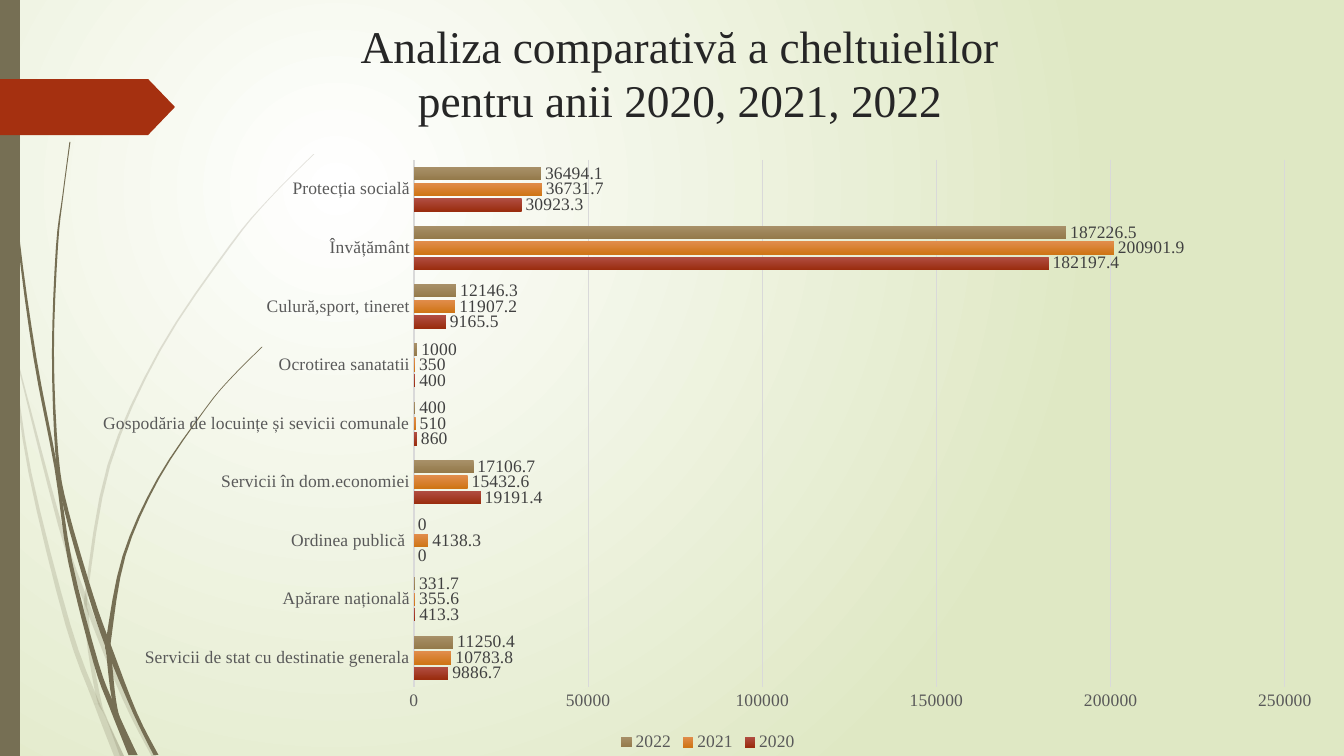
"""Build a slide comparing yearly spending by sector in a clustered bar chart."""
from lxml import etree
from pptx import Presentation
from pptx.chart.data import CategoryChartData
from pptx.dml.color import RGBColor
from pptx.enum.chart import XL_CHART_TYPE, XL_LABEL_POSITION, XL_LEGEND_POSITION, XL_TICK_MARK
from pptx.enum.shapes import MSO_SHAPE
from pptx.enum.text import MSO_ANCHOR, MSO_AUTO_SIZE, PP_ALIGN
from pptx.oxml import parse_xml
from pptx.oxml.ns import qn
from pptx.util import Pt

BARS = XL_CHART_TYPE.BAR_CLUSTERED
OUTSIDE = XL_LABEL_POSITION.OUTSIDE_END
BOTTOM = XL_LEGEND_POSITION.BOTTOM
NO_TICK = XL_TICK_MARK.NONE
RECT, ARROW = MSO_SHAPE.RECTANGLE, MSO_SHAPE.PENTAGON
TOP, CENTER, FIXED = MSO_ANCHOR.TOP, PP_ALIGN.CENTER, MSO_AUTO_SIZE.NONE

FONT = "Times New Roman"
SCALE = 12192000 / 1344
STEPS = 4
COLORS = {
    "stem": "766F54", "arrow": "A53010", "title": "262626", "axis": "595959",
    "label": "404040", "grid": "D9D9D9", "glow": "FFFFFF", "edge": "DFE8C4",
}
TITLE = "Analiza comparativă a cheltuielilor\vpentru anii 2020, 2021, 2022"
SECTORS = [
    "Servicii de stat cu destinatie generala", "Apărare națională",
    "Ordinea publică ", "Servicii în dom.economiei",
    "Gospodăria de locuințe și sevicii comunale", "Ocrotirea sanatatii",
    "Culură,sport, tineret", "Învățământ", "Protecția socială",
]
YEARS = [
    ("2020", ("B14E43", "9A2D0F"),
     (9886.7, 413.3, 0, 19191.4, 860, 400, 9165.5, 182197.4, 30923.3)),
    ("2021", ("E18D4C", "CF7516"),
     (10783.8, 355.6, 4138.3, 15432.6, 510, 350, 11907.2, 200901.9, 36731.7)),
    ("2022", ("A89068", "947A4B"),
     (11250.4, 331.7, 0, 17106.7, 400, 1000, 12146.3, 187226.5, 36494.1)),
]
CHART = (93, 138, 1230, 618)
PLOT = {"x": 321, "y": 22, "w": 871, "h": 527}

PALE = [
    ((0, 1, 4, 5),
     [(2, 293, 3), (12, 353, 2), (30, 473, 3), (68, 625, 5), (97, 704, 6),
      (119, 756, 10)]),
    ((0, 2, 4),
     [(14, 348, 1), (60, 525, 4), (87, 604, 5), (125, 699, 5), (154, 756, 5)]),
    ((0, 5, 6, 9, 10),
     [(314, 154, 1), (270, 198, 1), (230, 246, 2), (160, 350, 2), (109, 465, 3),
      (87, 589, 3), (87, 615, 4), (90, 651, 4), (99, 700, 4), (106, 717, 1),
      (122, 756, 4)]),
]
DARK = [
    ((0, 4, 7, 8),
     [(4, 0, 1), (8, 110, 1), (18, 234, 2), (35, 358, 3), (56, 468, 3),
      (70, 561, 4), (96, 663, 5), (112, 706, 6), (133, 755, 9)]),
    ((0, 4, 5, 7, 9),
     [(70, 142, 1), (63, 195, 1), (57, 247, 2), (53, 352, 2), (57, 455, 3),
      (66, 509, 4), (91, 596, 5), (109, 648, 6), (135, 713, 4), (156, 755, 5)]),
    ((0, 5, 6, 8, 9),
     [(262, 347, 1), (232, 377, 1), (206, 408, 1), (158, 479, 2), (124, 556, 3),
      (109, 637, 5), (109, 655, 5), (114, 700, 4), (122, 725, 1), (136, 755, 3)]),
]


def px(*sizes):
    """Turn px lengths into EMU."""
    return [round(size * SCALE) for size in sizes]


def rgb(name):
    """Look up a named colour, or read a hex string."""
    return RGBColor.from_string(COLORS.get(name, name))


def style(font, color, size=12.5):
    """Set typeface, size and colour of a font."""
    font.name, font.size, font.bold = FONT, Pt(size), False
    font.color.rgb = rgb(color)


def paint(shape, color, alpha=100):
    """Give a shape a flat fill with no line or shadow."""
    shape.shadow.inherit = False
    shape.line.fill.background()
    shape.fill.solid()
    shape.fill.fore_color.rgb = rgb(color)
    if alpha < 100:
        tint = shape.fill._xPr.find(".//" + qn("a:srgbClr"))
        etree.SubElement(tint, qn("a:alpha")).set("val", str(alpha * 1000))


def smooth(knots):
    """Run a Catmull-Rom curve through knots of centre x, centre y and width."""
    ends = [knots[0], *knots, knots[-1]]
    curve = []
    for a, b, c, d in zip(ends, ends[1:], ends[2:], ends[3:]):
        for step in range(STEPS):
            t = step / STEPS
            curve.append([
                (2 * q + (r - p) * t + (2 * p - 5 * q + 4 * r - s) * t ** 2
                 + (3 * q - p - 3 * r + s) * t ** 3) / 2
                for p, q, r, s in zip(a, b, c, d)])
    return curve + [knots[-1]]


def draw_stem(shapes, cuts, knots, alpha):
    """Draw one tapered stem, split at the knots named in cuts."""
    curve = smooth(knots)
    for first, last in zip(cuts, cuts[1:]):
        part = curve[first * STEPS:last * STEPS + 1]
        left = [px(x - w / 2, y) for x, y, w in part]
        right = [px(x + w / 2, y) for x, y, w in reversed(part)]
        pen = shapes.build_freeform(*left[0])
        pen.add_line_segments(left[1:] + right, close=True)
        paint(pen.convert_to_shape(), "stem", alpha)


def draw_back(slide):
    """Set the round background glow."""
    slide.background.fill.solid()
    flat = slide.background._cSld.find(".//" + qn("a:solidFill"))
    glow = parse_xml(
        '<a:gradFill xmlns:a="http://schemas.openxmlformats.org/drawingml/2006/main"'
        ' rotWithShape="1"><a:gsLst>'
        f'<a:gs pos="0"><a:srgbClr val="{COLORS["glow"]}"/></a:gs>'
        f'<a:gs pos="100000"><a:srgbClr val="{COLORS["edge"]}"/></a:gs></a:gsLst>'
        '<a:path path="circle"><a:fillToRect l="50000" t="50000" r="100000"'
        ' b="100000"/></a:path></a:gradFill>')
    flat.getparent().replace(flat, glow)


def draw_title(title):
    """Place and format the title."""
    title.left, title.top, title.width, title.height = px(151, 13, 1058, 139)
    frame = title.text_frame
    frame.text = TITLE
    frame.word_wrap, frame.auto_size, frame.vertical_anchor = True, FIXED, TOP
    frame.paragraphs[0].alignment = CENTER
    for run in frame.paragraphs[0].runs:
        style(run.font, "title", 32.4)


def place_plot(chart):
    """Fix the inner plot area within the chart."""
    area = chart._chartSpace.chart.plotArea
    for old in area.findall(qn("c:layout")):
        area.remove(old)
    layout = etree.Element(qn("c:layout"))
    manual = etree.SubElement(layout, qn("c:manualLayout"))
    wide, high = CHART[2:]
    spots = {"layoutTarget": "inner", "xMode": "edge", "yMode": "edge"}
    spots.update({tag: size / (wide if tag in "xw" else high) for tag, size in PLOT.items()})
    for tag, val in spots.items():
        etree.SubElement(manual, qn("c:" + tag)).set("val", str(val))
    area.insert(0, layout)


def draw_chart(shapes):
    """Add the bar chart."""
    data = CategoryChartData()
    data.categories = SECTORS
    for year, _, sums in YEARS:
        data.add_series(year, sums)
    chart = shapes.add_chart(BARS, *px(*CHART), data).chart
    chart.has_title = False
    style(chart.font, "label")
    chart.has_legend = True
    chart.legend.position, chart.legend.include_in_layout = BOTTOM, False
    style(chart.legend.font, "axis")
    for axis in (chart.category_axis, chart.value_axis):
        axis.major_tick_mark = axis.minor_tick_mark = NO_TICK
        style(axis.tick_labels.font, "axis")
    rule = chart.category_axis.format.line
    rule.color.rgb, rule.width = rgb("grid"), Pt(1)
    scale = chart.value_axis
    scale.minimum_scale, scale.maximum_scale, scale.major_unit = 0, 250000, 50000
    scale.format.line.fill.background()
    grid = scale.major_gridlines.format.line
    grid.color.rgb, grid.width = rgb("grid"), Pt(0.75)
    plot = chart.plots[0]
    plot.gap_width, plot.overlap, plot.vary_by_categories = 115, -20, False
    for bars, (_, shades, _) in zip(plot.series, YEARS):
        fill = bars.format.fill
        fill.gradient()
        fill.gradient_angle = 270
        for stop, shade in zip(fill.gradient_stops, shades):
            stop.color.rgb = rgb(shade)
        labels = bars.data_labels
        labels.show_value, labels.position = True, OUTSIDE
        style(labels.font, "label")
    place_plot(chart)


def main():
    """Build and save the slide."""
    deck = Presentation()
    deck.slide_width, deck.slide_height = px(1344, 756)
    slide = deck.slides.add_slide(deck.slide_layouts[5])
    shapes = slide.shapes
    draw_back(slide)
    for stems, alpha in ((PALE, 20), (DARK, 100)):
        for cuts, knots in stems:
            draw_stem(shapes, cuts, knots, alpha)
    paint(shapes.add_shape(RECT, *px(0, 0, 20, 756)), "stem")
    arrow = shapes.add_shape(ARROW, *px(0, 79, 175, 56))
    arrow.adjustments[0] = 0.48
    paint(arrow, "arrow")
    draw_title(shapes.title)
    draw_chart(shapes)
    deck.save("out.pptx")


if __name__ == "__main__":
    main()
